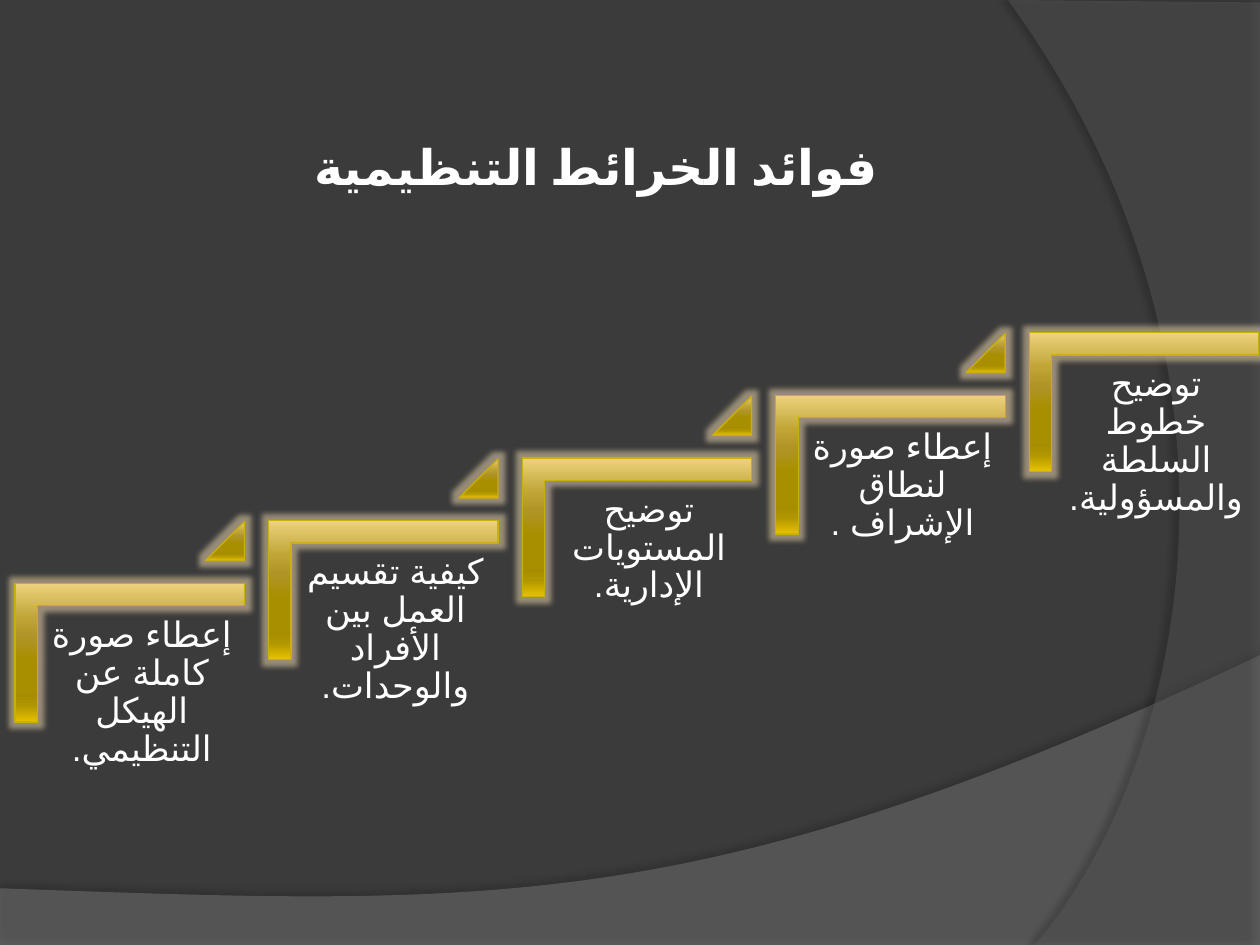
"""Build a slide of five rising steps on the benefits of organisational charts."""
from lxml.etree import SubElement
from pptx import Presentation
from pptx.dml.color import RGBColor
from pptx.enum.shapes import MSO_SHAPE as Shape
from pptx.enum.text import MSO_ANCHOR as Anchor, PP_ALIGN as Align
from pptx.oxml.ns import qn
from pptx.util import Inches, Pt

TITLE = "فوائد الخرائط التنظيمية"
BENEFITS = [
    "إعطاء صورة كاملة عن الهيكل التنظيمي.",
    "كيفية تقسيم العمل بين الأفراد والوحدات.",
    "توضيح المستويات الإدارية.",
    "إعطاء صورة لنطاق الإشراف .",
    "توضيح خطوط السلطة والمسؤولية.",
]
WHITE = RGBColor(0xFF, 0xFF, 0xFF)
BLACK = RGBColor(0, 0, 0)
CHARCOAL = RGBColor(0x3B, 0x3B, 0x3B)
SWEEP_GREY = RGBColor(0x7F, 0x7F, 0x7F)
ARC_GREY = RGBColor(0x5E, 0x5E, 0x5E)
GOLD_LINE = RGBColor(0xCC, 0xAF, 0x0A)
GLOW = RGBColor(0xE6, 0xD2, 0xAA)
GOLD_STOPS = [
    (0, RGBColor(0xEE, 0xD2, 0x7E)),
    (25, RGBColor(0xBF, 0xA5, 0x36)),
    (38, RGBColor(0xAF, 0x95, 0x27)),
    (55, RGBColor(0xA8, 0x8F, 0x00)),
    (80, RGBColor(0xA6, 0x8D, 0x00)),
    (88, RGBColor(0xAF, 0x95, 0x00)),
    (100, RGBColor(0xE6, 0xC1, 0x00)),
]
SWEEP = dict(curve=[(10, 5.2), (5.59, 7.29), (3.91, 7.19), (0, 7.05)],
             corners=[(0, 7.5), (10, 7.5)], color=SWEEP_GREY, opacity=45,
             shadow=dict(opacity=35, blurRad=Pt(4), dist=Pt(3.5), dir=270 * 60000))
ARC = dict(curve=[(8.21, 7.5), (9.35, 6.19), (10.18, 3), (8, 0)],
           corners=[(10, 0.02), (10, 7.5)], color=ARC_GREY, opacity=40,
           shadow=dict(opacity=45, blurRad=Pt(4), dist=Pt(4), dir=180 * 60000))
RUN, RISE = (8.35 - 0.3) / 4, (4.27 - 2.28) / 4
CORNER = (0.48, 4.27, 1.1, 1.82)
LABEL = (0.3, 4.82, 1.65, 1.44)
MARKER = (1.63, 4.14, 0.31, 0.31)


def add_effect(shape, kind, color, opacity, **settings):
    effects = SubElement(shape._element.spPr, qn("a:effectLst"))
    values = {key: str(int(value)) for key, value in settings.items()}
    effect = SubElement(effects, qn(kind), **values)
    tint = SubElement(effect, qn("a:srgbClr"), val=str(color))
    SubElement(tint, qn("a:alpha"), val=str(opacity * 1000))


def add_backdrop(slide, curve, corners, color, opacity, shadow):
    start, *bends = [(Inches(x), Inches(y)) for x, y in curve]
    builder = slide.shapes.build_freeform(*start)
    builder.add_line_segments([bends[-1]] + [(Inches(x), Inches(y)) for x, y in corners], close=True)
    backdrop = builder.convert_to_shape()
    edge = next(backdrop._element.spPr.iter(qn("a:lnTo")))
    arc = edge.makeelement(qn("a:cubicBezTo"))
    for x, y in bends:
        SubElement(arc, qn("a:pt"), x=str(x - backdrop.left), y=str(y - backdrop.top))
    edge.getparent().replace(edge, arc)
    backdrop.fill.solid()
    backdrop.fill.fore_color.rgb = color
    tint = next(backdrop._element.spPr.iter(qn("a:srgbClr")))
    SubElement(tint, qn("a:alpha"), val=str(opacity * 1000))
    backdrop.line.fill.background()
    add_effect(backdrop, "a:outerShdw", BLACK, **shadow)


def add_gold(slide, kind, box, adjustments, rotation=0):
    gold = slide.shapes.add_shape(kind, *map(Inches, box))
    gold.rotation = rotation
    for i, value in enumerate(adjustments):
        gold.adjustments[i] = value
    gold.fill.gradient()
    gold.fill.gradient_angle = 270
    gradient = gold._element.spPr.find(qn("a:gradFill"))
    gradient.set("rotWithShape", "0")
    stops = gradient.find(qn("a:gsLst"))
    for stop in list(stops):
        stops.remove(stop)
    for position, color in GOLD_STOPS:
        stop = SubElement(stops, qn("a:gs"), pos=str(position * 1000))
        SubElement(stop, qn("a:srgbClr"), val=str(color))
    gold.line.color.rgb = GOLD_LINE
    gold.line.width = Pt(0.75)
    add_effect(gold, "a:glow", GLOW, 55, rad=Pt(6.5))


def add_text(slide, text, box, *, font, size, bold=False, inset=0.08, top=None,
             anchor=Anchor.TOP, spacing=1.0):
    frame = slide.shapes.add_textbox(*map(Inches, box)).text_frame
    frame.word_wrap = True
    frame.vertical_anchor = anchor
    frame.margin_left = frame.margin_right = frame.margin_bottom = Inches(inset)
    frame.margin_top = Inches(inset if top is None else top)
    paragraph = frame.paragraphs[0]
    paragraph.alignment = Align.CENTER
    paragraph.line_spacing = spacing
    paragraph._p.get_or_add_pPr().set("rtl", "1")
    run = paragraph.add_run()
    run.text = text
    run.font.size = Pt(size)
    run.font.bold = bold
    run.font.color.rgb = WHITE
    run.font.name = font
    run.font._element.set("lang", "ar-SA")
    SubElement(run.font._element, qn("a:cs"), typeface=font)


def climb(box, step):
    left, top, width, height = box
    return left + step * RUN, top - step * RISE, width, height


def main():
    prs = Presentation()
    prs.slide_width, prs.slide_height = Inches(10), Inches(7.5)
    slide = prs.slides.add_slide(prs.slide_layouts[6])
    slide.background.fill.solid()
    slide.background.fill.fore_color.rgb = CHARCOAL
    for backdrop in (SWEEP, ARC):
        add_backdrop(slide, **backdrop)
    add_text(slide, TITLE, (0.91, 0.04, 7.64, 2.16), font="Lato", size=28, bold=True,
             inset=0.05, top=0.45, anchor=Anchor.MIDDLE)
    for step, benefit in enumerate(BENEFITS):
        add_gold(slide, Shape.CORNER, climb(CORNER, step), (0.161, 0.161), rotation=90)
        add_text(slide, benefit, climb(LABEL, step), font="Arial", size=20, spacing=0.9)
        if step < len(BENEFITS) - 1:
            add_gold(slide, Shape.ISOSCELES_TRIANGLE, climb(MARKER, step), (1,))
    prs.save("out.pptx")


if __name__ == "__main__":
    main()
